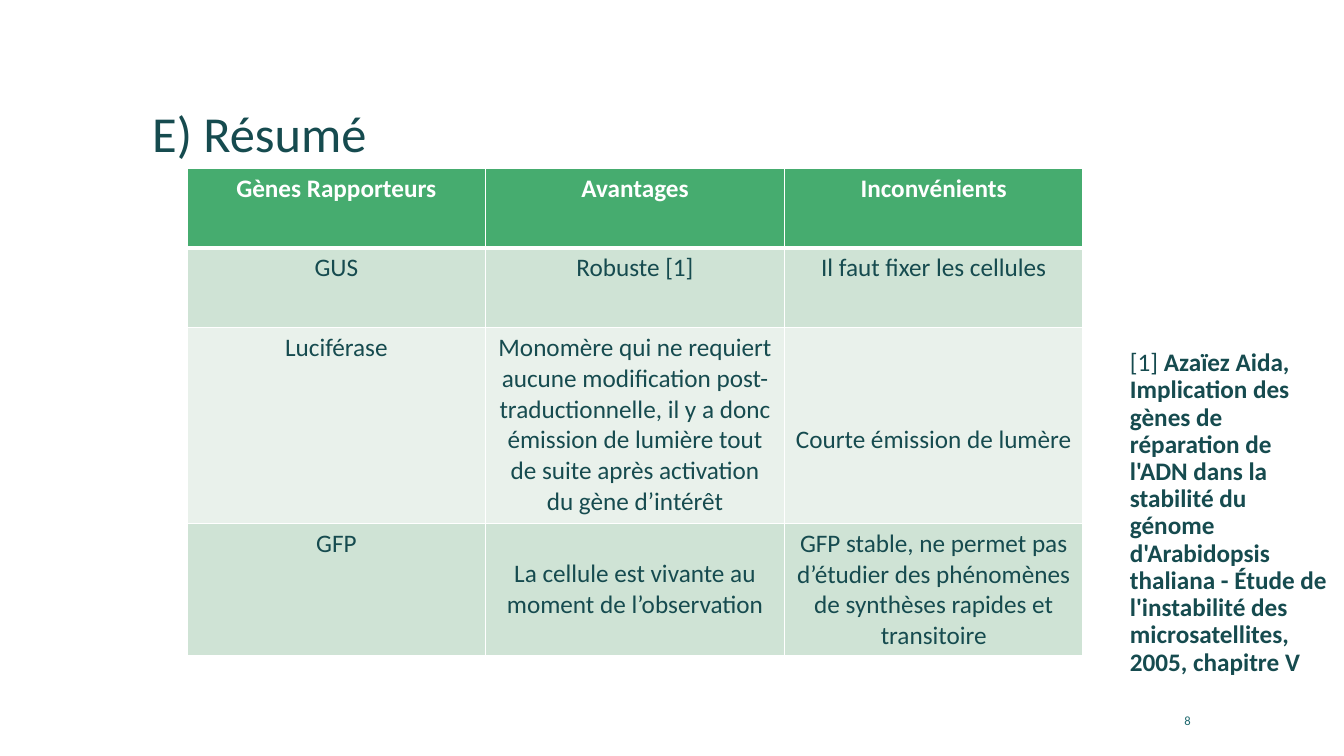
"""Build the summary slide comparing reporter genes."""
from dataclasses import dataclass

from lxml import etree
from pptx import Presentation, util as u
from pptx.dml.color import RGBColor
from pptx.enum import text
from pptx.oxml.ns import qn

TITLE = "E) Résumé"
HEADERS = ["Gènes Rapporteurs", "Avantages", "Inconvénients"]
GENES = [
    ["GUS", "Robuste [1]", "Il faut fixer les cellules"],
    ["Luciférase",
     "Monomère qui ne requiert aucune modification post-traductionnelle, il y a donc "
     "émission de lumière tout de suite après activation du gène d’intérêt",
     "Courte émission de lumère"],
    ["GFP", "La cellule est vivante au moment de l’observation",
     "GFP stable, ne permet pas d’étudier des phénomènes de synthèses rapides et transitoire"],
]
LINES_ABOVE = {(2, 2): 3, (3, 1): 1}
REFERENCE = [
    ("[1] ", False),
    ("Azaïez Aida, Implication des gènes de réparation de l'ADN dans la stabilité du génome "
     "d'Arabidopsis thaliana - Étude de l'instabilité des microsatellites, 2005, chapitre V", True),
]
PAGE = "8"

WIDTH, HEIGHT = 13.33, 7.5
COLUMN, ROW = WIDTH / 12, HEIGHT / 18
TITLE_AREA = (1.27, 1, 9.45, 3)
TABLE_AREA = (1.67, 4, 8, 11.62)
REFERENCE_AREA = (10, 8.21, 2, 9.41)
PAGE_AREA = (7.92, 16.68, 2.8, 0.96)
ROW_SPANS = [1.9, 1.9, 4.66, 3.16]


@dataclass(frozen=True)
class Theme:
    font: str = "Calibri"
    ink: str = "164B4F"
    page: str = "1F696F"
    white: str = "FFFFFF"
    header: str = "46AC6F"
    bands: tuple = ("CFE3D5", "E9F1EB")
    title_size: float = 36
    body_size: float = 18
    page_size: float = 9
    line_height: float = 1.22


THEME = Theme()


def place(area):
    left, top, width, height = area
    return [u.Inches(n) for n in (left * COLUMN, top * ROW, width * COLUMN, height * ROW)]


def style(p, size, color, bold=False):
    for r in p.runs:
        r.font.name, r.font.size, r.font.bold = THEME.font, u.Pt(size), bold
        r.font.color.rgb = RGBColor.from_string(color)


def add_text(s, area, runs, size, color, anchor=text.MSO_ANCHOR.TOP):
    tf = s.shapes.add_textbox(*place(area)).text_frame
    tf.word_wrap, tf.vertical_anchor = True, anchor
    p = tf.paragraphs[0]
    for words, bold in runs:
        r = p.add_run()
        r.text = words
    style(p, size, color)
    for r, (words, bold) in zip(p.runs, runs):
        r.font.bold = bold
    return p


def add_borders(cell, bottom):
    tc_pr = cell._tc.get_or_add_tcPr()
    sides = {"lnL": 1, "lnR": 1, "lnT": 1, "lnB": bottom}
    for i, (side, width) in enumerate(sides.items()):
        line = etree.Element(qn(f"a:{side}"), w=str(u.Pt(width)))
        fill = etree.SubElement(line, qn("a:solidFill"))
        etree.SubElement(fill, qn("a:srgbClr"), val=THEME.white)
        tc_pr.insert(i, line)


def add_gene_table(s):
    rows = [HEADERS] + GENES
    table = s.shapes.add_table(len(rows), len(HEADERS), *place(TABLE_AREA)).table
    for column in table.columns:
        column.width = u.Inches(TABLE_AREA[2] * COLUMN / len(HEADERS))
    for i, words in enumerate(rows):
        table.rows[i].height = u.Inches(ROW_SPANS[i] * ROW)
        head = i == 0
        for j, word in enumerate(words):
            cell = table.cell(i, j)
            cell.text = word
            lead = LINES_ABOVE.get((i, j), 0) * THEME.body_size * THEME.line_height
            cell.margin_top = u.Inches(0.05) + u.Pt(lead)
            cell.fill.solid()
            cell.fill.fore_color.rgb = RGBColor.from_string(
                THEME.header if head else THEME.bands[(i - 1) % 2])
            p = cell.text_frame.paragraphs[0]
            p.alignment = text.PP_ALIGN.CENTER
            style(p, THEME.body_size, THEME.white if head else THEME.ink, head)
            add_borders(cell, 3 if head else 1)


def main():
    prs = Presentation()
    prs.slide_width, prs.slide_height = u.Inches(WIDTH), u.Inches(HEIGHT)
    s = prs.slides.add_slide(prs.slide_layouts[6])
    p = add_text(s, TITLE_AREA, [(TITLE, False)], THEME.title_size, THEME.ink,
                 text.MSO_ANCHOR.BOTTOM)
    p.line_spacing = 0.9
    add_gene_table(s)
    p = add_text(s, REFERENCE_AREA, REFERENCE, THEME.body_size, THEME.ink)
    p.line_spacing = 0.9
    p = add_text(s, PAGE_AREA, [(PAGE, False)], THEME.page_size, THEME.page,
                 text.MSO_ANCHOR.MIDDLE)
    p.alignment = text.PP_ALIGN.RIGHT
    prs.save("out.pptx")


if __name__ == "__main__":
    main()
